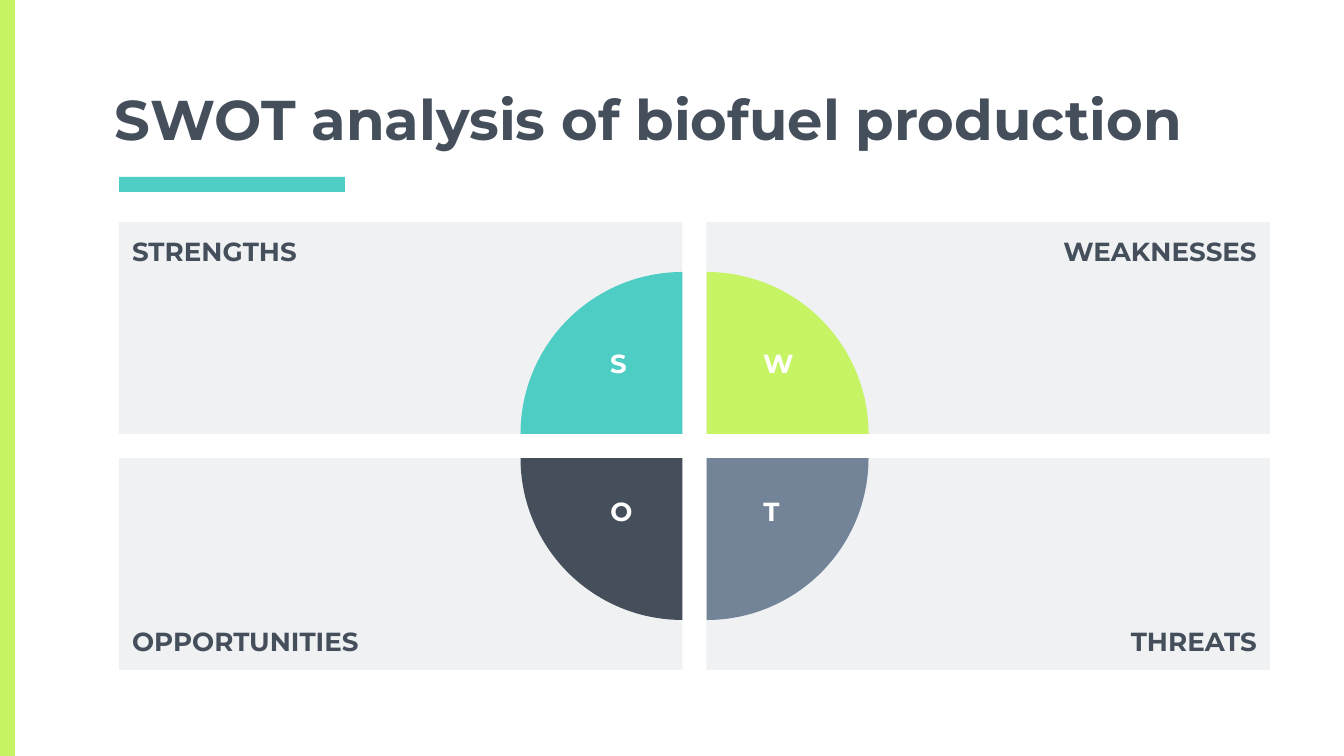
from pptx import Presentation
from pptx.dml.color import RGBColor
from pptx.enum.shapes import MSO_SHAPE
from pptx.enum.text import MSO_ANCHOR, PP_ALIGN
from pptx.util import Emu, Pt

SLIDE_W, SLIDE_H = 1344, 756
FONT = "Montserrat"
DARK, TEAL, LIME, SLATE = "454F5B", "4ECDC4", "C7F464", "738498"
PALE, WHITE = "EFF1F3", "FFFFFF"
GAP = 24
INSET = 13
PIE_RADIUS = 162


def px(length):
    return Emu(round(length * 914400 / 134.4))


def color(hex_string):
    return RGBColor.from_string(hex_string)


def add_filled(slide, preset, box, fill):
    shape = slide.shapes.add_shape(preset, *map(px, box))
    shape.shadow.inherit = False
    shape.fill.solid()
    shape.fill.fore_color.rgb = color(fill)
    shape.line.fill.background()
    return shape


def write(shape, text, size, ink, align=PP_ALIGN.LEFT,
          anchor=MSO_ANCHOR.TOP, insets=(INSET, 7, INSET, 7)):
    """Set one bold line of text; insets run left, top, right, bottom."""
    frame = shape.text_frame
    frame.word_wrap = True
    frame.vertical_anchor = anchor
    (frame.margin_left, frame.margin_top,
     frame.margin_right, frame.margin_bottom) = map(px, insets)
    frame.text = text
    paragraph = frame.paragraphs[0]
    paragraph.alignment = align
    font = paragraph.runs[0].font
    font.name, font.size, font.bold = FONT, Pt(size), True
    font.color.rgb = color(ink)


def add_heading(slide, box):
    left, top, width, height = box
    title = slide.shapes.add_textbox(*map(px, box))
    write(title, "SWOT analysis of biofuel production", 30, DARK,
          anchor=MSO_ANCHOR.BOTTOM, insets=(INSET,) * 4)
    add_filled(slide, MSO_SHAPE.RECTANGLE,
               (left + 17, top + height + 12, 226, 15), TEAL)


def add_quadrant(slide, box, column, row, label, fill, letter_shift, letter_width):
    """Panel with a quarter circle in the corner that faces the matrix centre."""
    left, top, width, height = box
    panel = add_filled(slide, MSO_SHAPE.RECTANGLE, box, PALE)
    insets = (202, INSET, INSET, INSET) if column else (INSET, INSET, 202, INSET)
    write(panel, label, 14, DARK,
          PP_ALIGN.RIGHT if column else PP_ALIGN.LEFT,
          MSO_ANCHOR.BOTTOM if row else MSO_ANCHOR.TOP, insets)

    corner_x = left if column else left + width
    corner_y = top if row else top + height
    quarter = add_filled(slide, MSO_SHAPE.PIE,
                         (corner_x - PIE_RADIUS, corner_y - PIE_RADIUS,
                          2 * PIE_RADIUS, 2 * PIE_RADIUS), fill)
    quarter.adjustments[0] = 108
    quarter.adjustments[1] = 162
    quarter.rotation = (270 - 90 * column) if row else 90 * column

    letter = slide.shapes.add_textbox(
        px(corner_x + letter_shift - letter_width / 2),
        px(corner_y + (30 if row else -94)), px(letter_width), px(60))
    write(letter, label[0], 14, WHITE, PP_ALIGN.CENTER)


def add_matrix(slide, box):
    left, top, width, height = box
    panel_w, panel_h = (width - GAP) / 2, (height - GAP) / 2
    quadrants = [
        ("STRENGTHS", TEAL, -64, 48),
        ("WEAKNESSES", LIME, 72, 93),
        ("OPPORTUNITIES", DARK, -61, 63),
        ("THREATS", SLATE, 65, 51),
    ]
    for index, quadrant in enumerate(quadrants):
        row, column = divmod(index, 2)
        panel_box = (left + column * (panel_w + GAP),
                     top + row * (panel_h + GAP), panel_w, panel_h)
        add_quadrant(slide, panel_box, column, row, *quadrant)


def main():
    deck = Presentation()
    deck.slide_width, deck.slide_height = px(SLIDE_W), px(SLIDE_H)
    slide = deck.slides.add_slide(deck.slide_layouts[6])
    add_filled(slide, MSO_SHAPE.RECTANGLE, (0, 0, 15, SLIDE_H), LIME)
    add_heading(slide, (102, 93, 1141, 72))
    add_matrix(slide, (119, 222, 1151, 448))
    deck.save("out.pptx")


if __name__ == "__main__":
    main()
